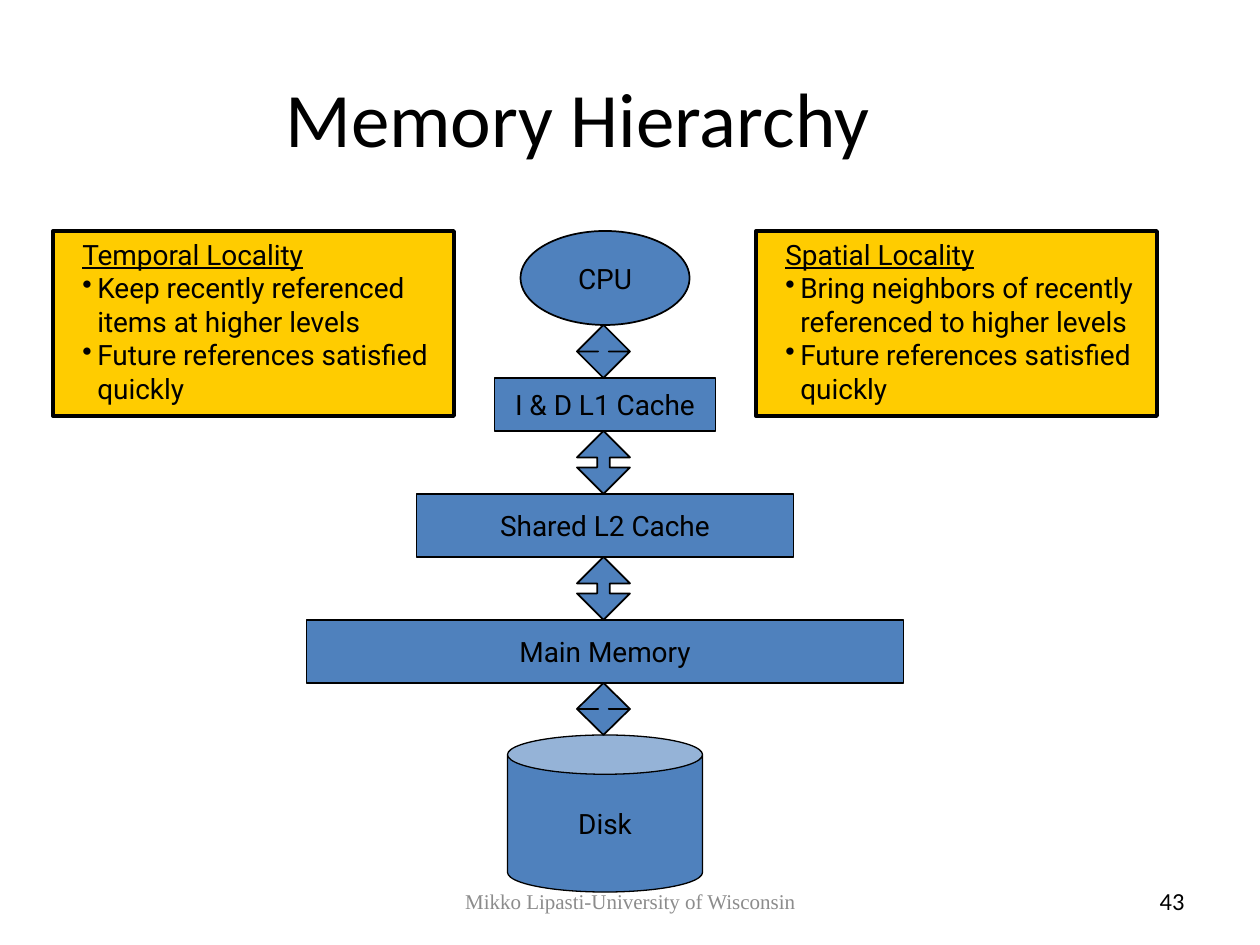
from dataclasses import dataclass
from itertools import pairwise
from lxml.etree import SubElement
from pptx import Presentation
from pptx.dml.color import RGBColor as Rgb
from pptx.enum.shapes import MSO_SHAPE as Kind
from pptx.enum.text import MSO_ANCHOR as Anchor, PP_ALIGN as Align
from pptx.oxml.ns import qn
from pptx.util import Emu, Pt

TITLE = "Memory Hierarchy"
FOOTER = "Mikko Lipasti-University of Wisconsin"
NUMBER = "43"

# label, kind, width, height, gap below, line width
TIERS = [
    ("CPU", Kind.OVAL, 169, 94, 53, 1),
    ("I & D L1 Cache", Kind.RECTANGLE, 221, 53, 63, 1),
    ("Shared L2 Cache", Kind.RECTANGLE, 377, 63, 63, 1),
    ("Main Memory", Kind.RECTANGLE, 597, 63, 52, 1),
    ("Disk", Kind.CAN, 195, 157, 0, 0.75),
]

# left, heading, points
NOTES = [
    (53, "Temporal Locality", [
        "Keep recently referenced items at higher levels",
        "Future references satisfied quickly"]),
    (756, "Spatial Locality", [
        "Bring neighbors of recently referenced to higher levels",
        "Future references satisfied quickly"]),
]

TOP = 231
MID = 605
ARROW_LEFT, ARROW_WIDTH = 577, 53
NOTE_WIDTH, NOTE_HEIGHT = 401, 185
INDENT, HANG = 32, 15


@dataclass(frozen=True)
class Theme:
    ink: str = "000000"
    blue: str = "4F81BD"
    gold: str = "FFCC00"
    gray: str = "8C8C8C"
    head: str = "Calibri"
    body: str = "Roboto"
    foot: str = "Times New Roman"
    title: int = 44
    text: int = 16
    page: int = 14
    small: int = 12


THEME = Theme()


def px(n):
    return Emu(round(n * 914400 / 126))


def write(para, text, size=THEME.text, face=THEME.body, color=THEME.ink,
          under=False):
    run = para.add_run()
    run.text = text
    font = run.font
    font.size, font.name = Pt(size), face
    font.color.rgb = Rgb.from_string(color)
    font.underline = under


def label(slide, box, text, align, size, face, color=THEME.ink):
    frame = slide.shapes.add_textbox(*map(px, box)).text_frame
    frame.word_wrap = True
    frame.vertical_anchor = Anchor.MIDDLE
    para = frame.paragraphs[0]
    para.alignment = align
    write(para, text, size, face, color)


def block(slide, kind, box, fill, width):
    shape = slide.shapes.add_shape(kind, *map(px, box))
    shape.shadow.inherit = False
    shape.fill.solid()
    shape.fill.fore_color.rgb = Rgb.from_string(fill)
    shape.line.color.rgb = Rgb.from_string(THEME.ink)
    shape.line.width = Pt(width)
    return shape


def stack(slide):
    """Draw the tiers from the top down, then the arrows in their gaps."""
    y, spans = TOP, []
    for text, kind, wide, high, gap, line in TIERS:
        box = (MID - wide / 2, y, wide, high)
        shape = block(slide, kind, box, THEME.blue, line)
        frame = shape.text_frame
        frame.word_wrap = False
        frame.vertical_anchor = Anchor.MIDDLE
        para = frame.paragraphs[0]
        para.alignment = Align.CENTER
        write(para, text)
        spans.append((y, y + high))
        y += high + gap
    for (_, start), (end, _) in pairwise(spans):
        high = end - start
        box = (ARROW_LEFT, start, ARROW_WIDTH, high)
        arrow = block(slide, Kind.UP_DOWN_ARROW, box, THEME.blue, 1)
        arrow.adjustments[0] = 0.5
        arrow.adjustments[1] = 0.2 * high / ARROW_WIDTH


def note(slide, left, head, points):
    box = (left, TOP, NOTE_WIDTH, NOTE_HEIGHT)
    frame = block(slide, Kind.RECTANGLE, box, THEME.gold, 2.25).text_frame
    frame.word_wrap = True
    frame.vertical_anchor = Anchor.TOP
    for i, text in enumerate([head, *points]):
        para = frame.add_paragraph() if i else frame.paragraphs[0]
        para.alignment = Align.LEFT
        props = para._p.get_or_add_pPr()
        props.set("marL", str(px(INDENT)))
        props.set("indent", str(-px(HANG)))
        if i:
            SubElement(props, qn("a:buChar"), char="•")
        write(para, text, under=not i)


def main():
    deck = Presentation()
    deck.slide_width, deck.slide_height = px(1260), px(945)
    slide = deck.slides.add_slide(deck.slide_layouts[6])
    label(slide, (63, 38, 1029, 158), TITLE, Align.CENTER,
          THEME.title, THEME.head)
    stack(slide)
    for item in NOTES:
        note(slide, *item)
    label(slide, (1050, 876, 147, 50), NUMBER, Align.RIGHT,
          THEME.page, THEME.head)
    label(slide, (431, 876, 399, 50), FOOTER, Align.CENTER,
          THEME.small, THEME.foot, THEME.gray)
    deck.save("out.pptx")


if __name__ == "__main__":
    main()
